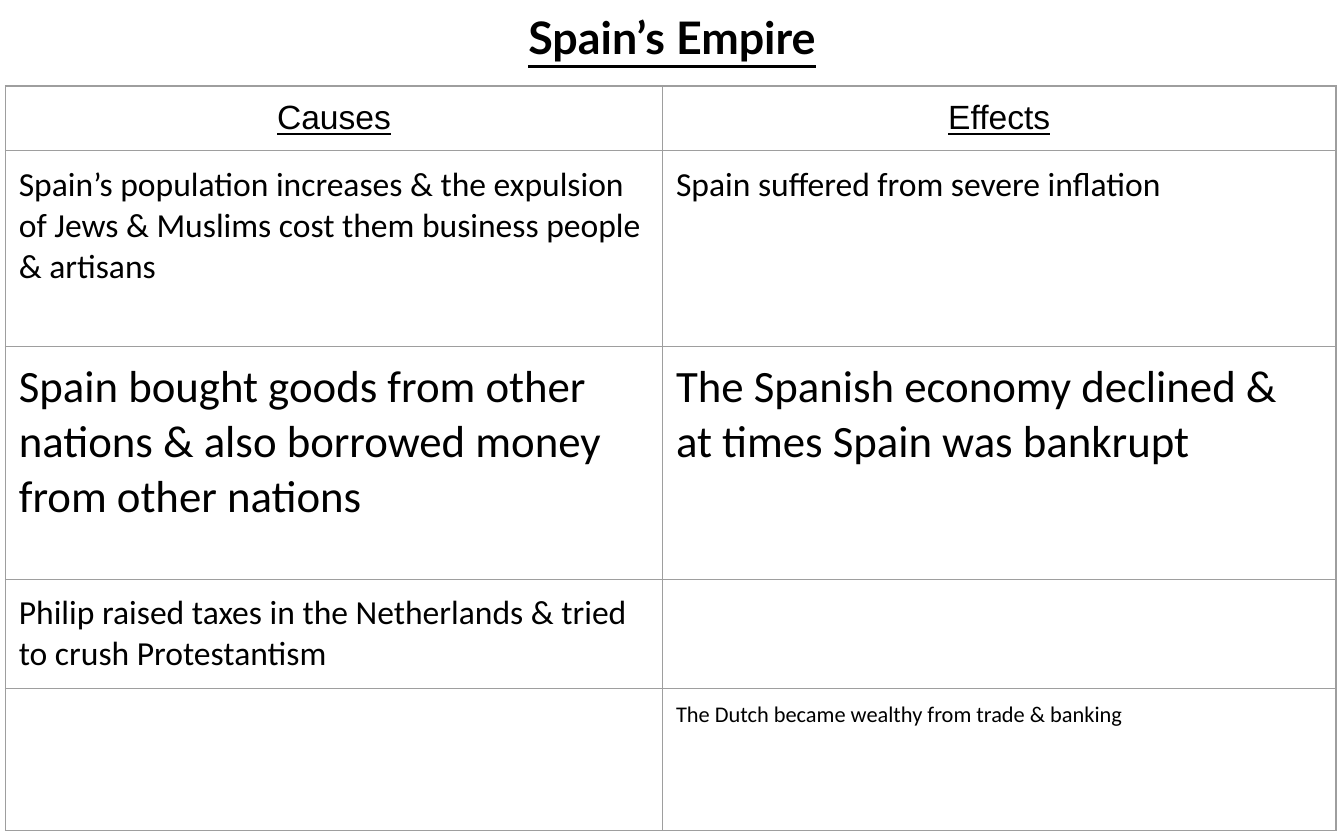
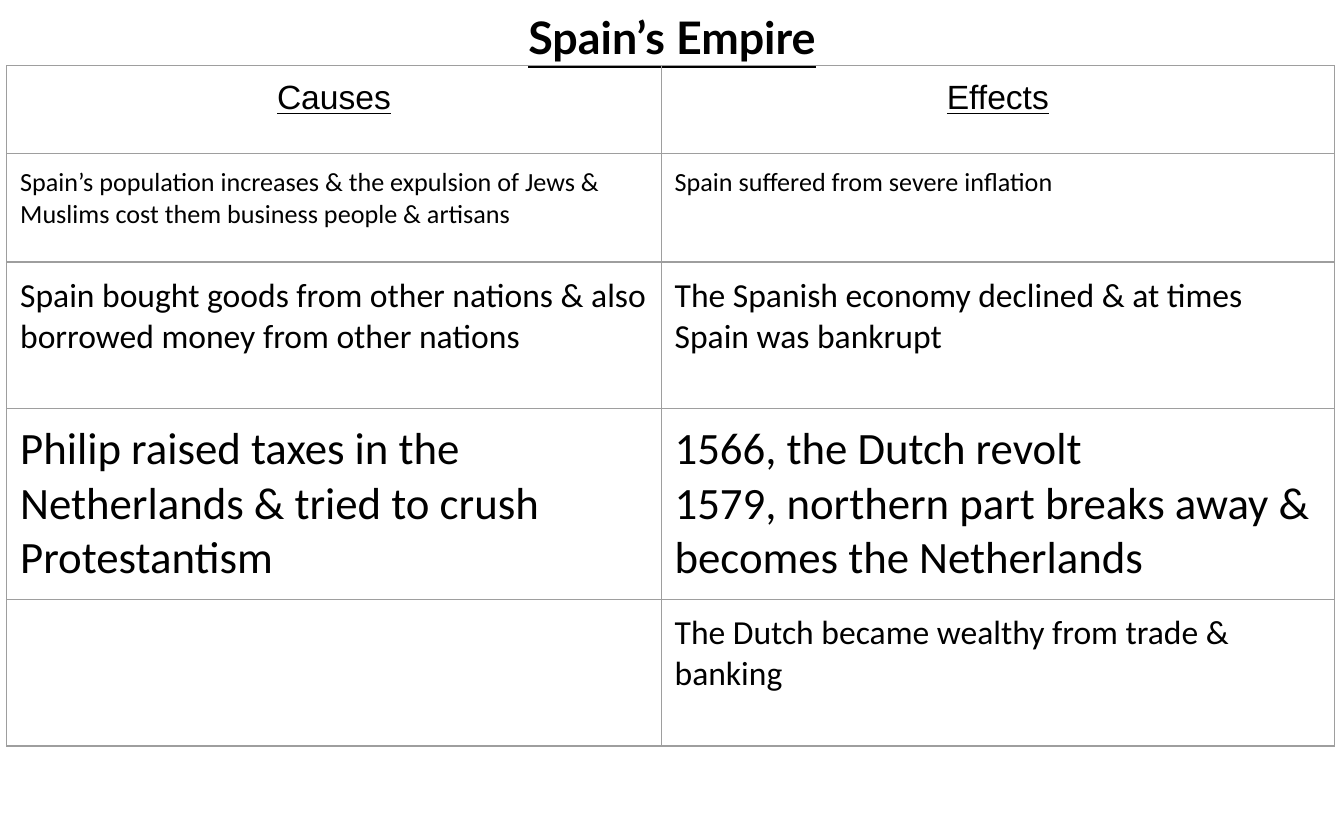
from dataclasses import dataclass

from lxml.etree import SubElement
from pptx import Presentation
from pptx.dml.color import RGBColor
from pptx.enum.text import MSO_ANCHOR, MSO_AUTO_SIZE, PP_ALIGN
from pptx.oxml.ns import qn
from pptx.util import Inches, Pt


@dataclass(frozen=True)
class Theme:
    """Colours, fonts and type sizes shared by the slides."""

    text: str = "000000"
    border: str = "9E9E9E"
    border_width: float = 0.75
    title_font: str = "Lato"
    header_font: str = "Arial"
    body_font: str = "Calibri"
    title_size: int = 24
    focus_size: int = 24
    body_size: int = 18
    small_size: int = 14
    tiny_size: int = 12
    margin: float = 0.1


THEME = Theme()
TITLE = "Spain’s Empire"
HEADERS = ("Causes", "Effects")
POPULATION = (
    "Spain’s population increases & the expulsion of Jews & Muslims cost them business people & artisans",
    "Spain suffered from severe inflation",
)
BORROWING = (
    "Spain bought goods from other nations & also borrowed money from other nations",
    "The Spanish economy declined & at times Spain was bankrupt",
)
TAXES = "Philip raised taxes in the Netherlands & tried to crush Protestantism"
REVOLT = "1566, the Dutch revolt\n1579, northern part breaks away & becomes the Netherlands"
DUTCH_WEALTH = ("", "The Dutch became wealthy from trade & banking")

SLIDES = (
    {
        "position": (0.04, 0.64),
        "column_widths": (4.89, 5.01),
        "header_height": 0.47,
        "rows": (
            (1.46, THEME.body_size, POPULATION),
            (1.73, THEME.focus_size, BORROWING),
            (0.65, THEME.body_size, (TAXES, "")),
            (1.06, THEME.tiny_size, DUTCH_WEALTH),
        ),
    },
    {
        "position": (0.05, 0.49),
        "column_widths": (4.87, 5.01),
        "header_height": 0.65,
        "rows": (
            (0.81, THEME.small_size, POPULATION),
            (1.09, THEME.body_size, BORROWING),
            (1.09, THEME.focus_size, (TAXES, REVOLT)),
            (1.09, THEME.body_size, DUTCH_WEALTH),
        ),
    },
)


def set_attributes(target, values):
    """Set each named attribute of the target."""
    for name, value in values.items():
        setattr(target, name, value)


def set_margins(target):
    """Give a cell or text frame the shared margin on all sides."""
    for side in ("left", "right", "top", "bottom"):
        setattr(target, f"margin_{side}", Inches(THEME.margin))


def write_text(text_frame, text, alignment, font_values):
    """Write text and format every paragraph alike."""
    text_frame.text = text
    for paragraph in text_frame.paragraphs:
        paragraph.alignment = alignment
        set_attributes(paragraph.font, font_values)
        for run in paragraph.runs:
            set_attributes(run.font, font_values)
            run.font.color.rgb = RGBColor.from_string(THEME.text)


def add_title(slide, presentation):
    """Place and format the title along the top edge."""
    title = slide.shapes.title
    set_attributes(
        title,
        {"left": 0, "top": 0, "width": presentation.slide_width, "height": Inches(0.55)},
    )
    text_frame = title.text_frame
    set_margins(text_frame)
    set_attributes(
        text_frame,
        {"word_wrap": True, "auto_size": MSO_AUTO_SIZE.NONE, "vertical_anchor": MSO_ANCHOR.MIDDLE},
    )
    font_values = {
        "name": THEME.title_font,
        "size": Pt(THEME.title_size),
        "bold": True,
        "underline": True,
    }
    write_text(text_frame, TITLE, PP_ALIGN.CENTER, font_values)


def add_borders(cell):
    """Draw a thin line on each side of a cell."""
    properties = cell._tc.get_or_add_tcPr()
    for side in ("lnL", "lnR", "lnT", "lnB"):
        line = SubElement(properties, qn(f"a:{side}"), w=str(Pt(THEME.border_width)))
        fill = SubElement(line, qn("a:solidFill"))
        SubElement(fill, qn("a:srgbClr"), val=THEME.border)


def format_cell(cell, text, size, is_header):
    """Fill one table cell as a header or as body text."""
    set_margins(cell)
    add_borders(cell)
    cell.fill.background()
    font_values = {
        "name": THEME.header_font if is_header else THEME.body_font,
        "size": Pt(size),
        "bold": False,
        "underline": is_header,
    }
    alignment = PP_ALIGN.CENTER if is_header else PP_ALIGN.LEFT
    write_text(cell.text_frame, text, alignment, font_values)


def add_cause_table(slide, position, column_widths, header_height, rows):
    """Add the table that pairs causes with effects."""
    rows = ((header_height, THEME.body_size, HEADERS), *rows)
    left, top = position
    height = sum(row[0] for row in rows)
    frame = slide.shapes.add_table(
        len(rows),
        len(column_widths),
        Inches(left),
        Inches(top),
        Inches(sum(column_widths)),
        Inches(height),
    )
    table = frame.table
    set_attributes(table, {"first_row": False, "horz_banding": False})
    for column, width in zip(table.columns, column_widths):
        column.width = Inches(width)
    for row_index, (row_height, size, texts) in enumerate(rows):
        table.rows[row_index].height = Inches(row_height)
        for column_index, text in enumerate(texts):
            format_cell(table.cell(row_index, column_index), text, size, row_index == 0)


def main():
    """Build and save the presentation."""
    presentation = Presentation()
    set_attributes(presentation, {"slide_width": Inches(10), "slide_height": Inches(6.25)})
    title_only = presentation.slide_layouts.get_by_name("Title Only")
    for content in SLIDES:
        slide = presentation.slides.add_slide(title_only)
        add_title(slide, presentation)
        add_cause_table(slide, **content)
    presentation.save("out.pptx")


if __name__ == "__main__":
    main()
